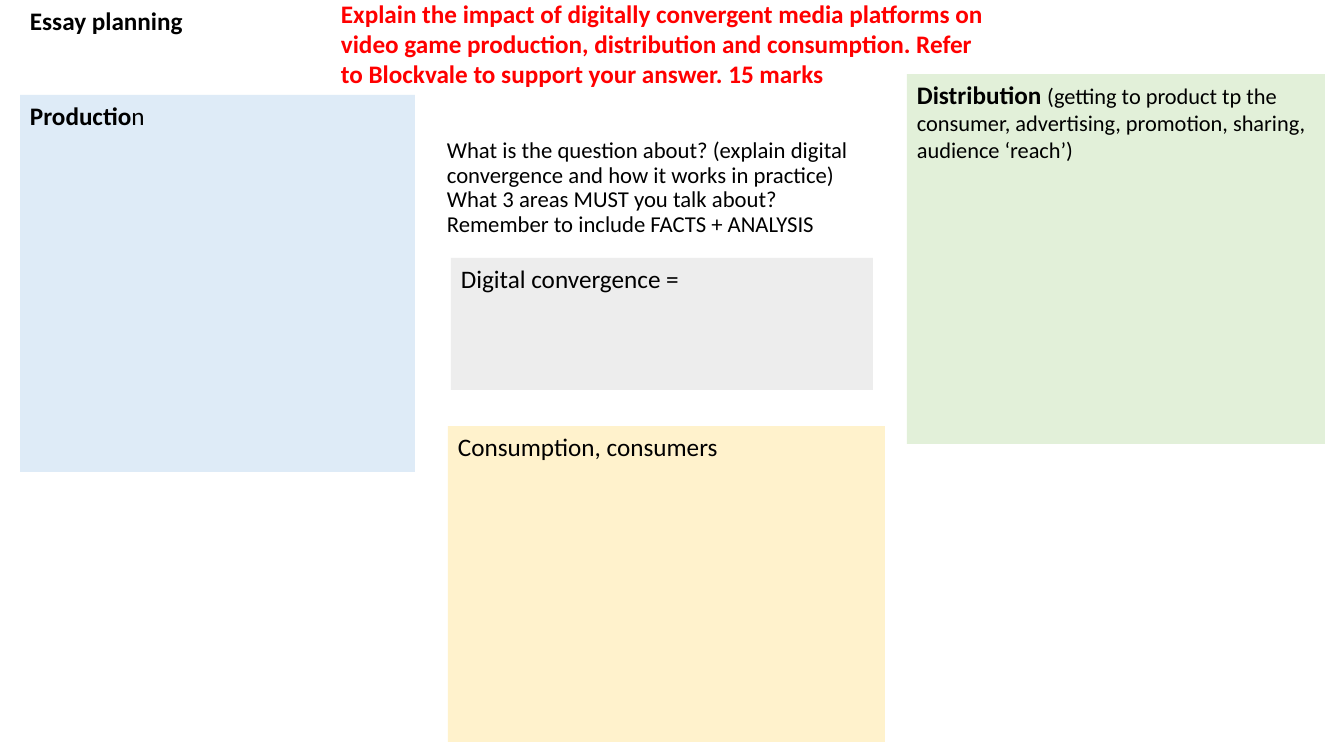
from pptx import Presentation
from pptx.dml.color import RGBColor
from pptx.enum.shapes import MSO_SHAPE
from pptx.enum.text import MSO_ANCHOR, PP_ALIGN
from pptx.util import Emu, Pt

RECTANGLE = MSO_SHAPE.RECTANGLE
TOP, MIDDLE = MSO_ANCHOR.TOP, MSO_ANCHOR.MIDDLE
LEFT = PP_ALIGN.LEFT

FONT = "Calibri"
COLORS = {
    "black": "000000",
    "red": "FF0000",
    "grey": "EDEDED",
    "blue": "DEEBF7",
    "green": "E2F0D9",
    "yellow": "FFF2CC",
}

GUIDANCE = {
    "box": (437, 115, 422, 146),
    "anchor": MIDDLE,
    "spacing": 0.9,
    "paragraphs": [
        [("What is the question about? (explain digital convergence and how it works in practice)", 16.2, False)],
        [("What 3 areas MUST you talk about? Remember to include FACTS + ANALYSIS", 16.2, False)],
    ],
}
HEADING = {
    "box": (20, 0, 174, 40),
    "wrap": False,
    "paragraphs": [[("Essay planning", 18, True)]],
}
QUESTION = {
    "box": (331, -7, 672, 132),
    "color": "red",
    "paragraphs": [[(
        "Explain the impact of digitally convergent media platforms on video game production, "
        "distribution and consumption. Refer to Blockvale to support your answer. 15 marks",
        18, True,
    )]],
}
PANELS = [
    {
        "box": (451, 258, 422, 132),
        "fill": "grey",
        "paragraphs": [[("Digital convergence =", 18, False)]],
    },
    {
        "box": (20, 95, 395, 377),
        "fill": "blue",
        "paragraphs": [[("Productio", 18, True), ("n", 18, False)]],
    },
    {
        "box": (907, 74, 418, 370),
        "fill": "green",
        "paragraphs": [[
            ("Distribution ", 18, True),
            ("(getting to product tp the consumer, advertising, promotion, sharing, audience ‘reach’)", 16, False),
        ]],
    },
    {
        "box": (448, 426, 437, 316),
        "fill": "yellow",
        "paragraphs": [[("Consumption, consumers", 18, False)]],
    },
]


def px(length):
    return Emu(round(length * 914400 / 100.8))


def color(name):
    return RGBColor.from_string(COLORS[name])


def add_block(slide, block):
    box = [px(length) for length in block["box"]]
    if "fill" in block:
        area = slide.shapes.add_shape(RECTANGLE, *box)
        area.shadow.inherit = False
        area.fill.solid()
        area.fill.fore_color.rgb = color(block["fill"])
        area.line.fill.background()
    else:
        area = slide.shapes.add_textbox(*box)

    frame = area.text_frame
    frame.word_wrap = block.get("wrap", True)
    frame.vertical_anchor = block.get("anchor", TOP)
    for index, runs in enumerate(block["paragraphs"]):
        paragraph = frame.add_paragraph() if index else frame.paragraphs[0]
        paragraph.alignment = LEFT
        paragraph.line_spacing = block.get("spacing", 1.0)
        for words, size, bold in runs:
            run = paragraph.add_run()
            run.text = words
            run.font.name = FONT
            run.font.size = Pt(size)
            run.font.bold = bold
            run.font.color.rgb = color(block.get("color", "black"))


def main():
    deck = Presentation()
    deck.slide_width, deck.slide_height = px(1344), px(756)
    slide = deck.slides.add_slide(deck.slide_layouts[6])
    for block in [GUIDANCE, HEADING, *PANELS, QUESTION]:
        add_block(slide, block)
    deck.save("out.pptx")


if __name__ == "__main__":
    main()
